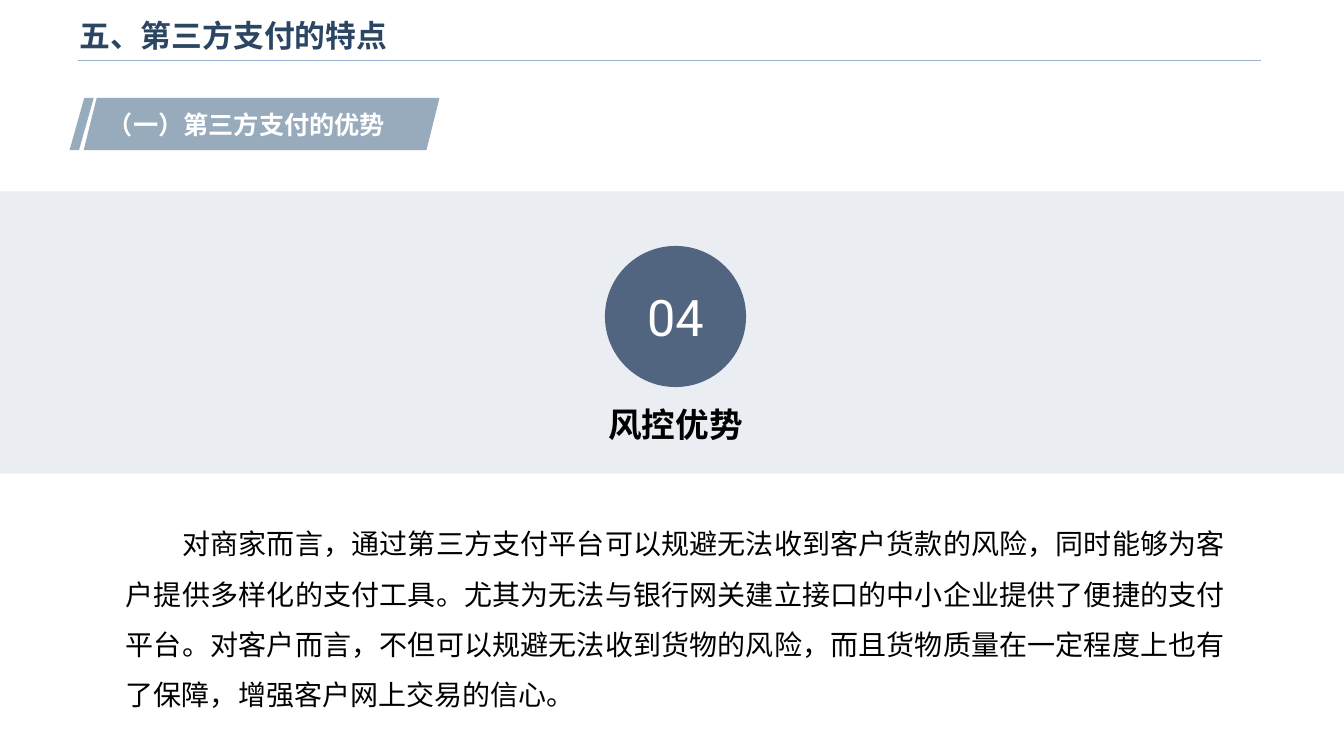
from pptx import Presentation
from pptx.dml.color import RGBColor
from pptx.enum.shapes import MSO_CONNECTOR as Line, MSO_SHAPE as Kind
from pptx.enum.text import MSO_ANCHOR as Anchor, PP_ALIGN as Align
from pptx.oxml.ns import qn
from pptx.util import Inches, Pt
from lxml import etree

SANS = "Noto Sans CJK SC"


def color(code):
    return RGBColor.from_string(code)


def write(shape, text, size, code, face=SANS, bold=False, anchor=Anchor.TOP, **form):
    frame = shape.text_frame
    frame.word_wrap = True
    frame.vertical_anchor = anchor
    par = frame.paragraphs[0]
    for name, value in form.items():
        setattr(par, name, value)
    run = par.add_run()
    run.text = text
    look = {"size": Pt(size), "name": face, "bold": bold}
    for name, value in look.items():
        setattr(run.font, name, value)
    run.font.color.rgb = color(code)
    # Chinese glyphs take their own typeface
    east = etree.SubElement(run.font._element, qn("a:ea"))
    east.set("typeface", SANS)
    return par


deck = Presentation()
deck.slide_width, deck.slide_height = Inches(13.33), Inches(7.5)
slide = deck.slides.add_slide(deck.slide_layouts[6])
shapes = slide.shapes

# Rule under the title
rule = shapes.add_connector(Line.STRAIGHT, Inches(0.77), Inches(0.6), Inches(12.51), Inches(0.6))
rule.line.color.rgb = color("98B4D2")
rule.line.width = Pt(1)
etree.SubElement(rule._element.spPr, qn("a:effectLst"))

# Filled shapes: section tag, band and number disc
plain = {}
for name, kind, box, fill, slant in [
    ("stripe", Kind.PARALLELOGRAM, (0.69, 0.97, 0.24, 0.52), "94ACBC", 0.61),
    ("tag", Kind.PARALLELOGRAM, (0.83, 0.97, 3.53, 0.52), "97ABBD", 0.25),
    ("band", Kind.RECTANGLE, (0, 1.9, 13.33, 2.8), "EAEEF2", None),
    ("disc", Kind.OVAL, (6, 2.44, 1.4, 1.4), "526580", None),
]:
    shape = shapes.add_shape(kind, *map(Inches, box))
    shape.shadow.inherit = False
    shape.fill.solid()
    shape.fill.fore_color.rgb = color(fill)
    shape.line.fill.background()
    if slant:
        shape.adjustments[0] = slant
    plain[name] = shape
write(plain["disc"], "04", 36, "FFFFFF", "Roboto", anchor=Anchor.MIDDLE, alignment=Align.CENTER)

# Tag text sits slightly left of the middle
write(plain["tag"], "（一）第三方支付的优势", 18, "FFFFFF", bold=True,
      anchor=Anchor.MIDDLE, alignment=Align.CENTER)
inset = {"word_wrap": False, "margin_left": 0, "margin_right": Inches(0.3)}
for name, value in inset.items():
    setattr(plain["tag"].text_frame, name, value)

# Title and heading
title = shapes.add_textbox(Inches(0.69), Inches(0.08), Inches(10.71), Inches(0.53))
write(title, "五、第三方支付的特点", 22, "2B4663", "Arial", True, Anchor.MIDDLE)

head = shapes.add_textbox(Inches(1.08), Inches(3.84), Inches(11.24), Inches(0.62))
write(head, "风控优势", 24, "000000", bold=True, alignment=Align.CENTER, line_spacing=1.3)

# Body text with an indented first line
body = shapes.add_textbox(Inches(1.15), Inches(5.01), Inches(11.1), Inches(2.12))
par = write(
    body,
    "对商家而言，通过第三方支付平台可以规避无法收到客户货款的风险，同时能够为客户提供多样化的支付工具。"
    "尤其为无法与银行网关建立接口的中小企业提供了便捷的支付平台。"
    "对客户而言，不但可以规避无法收到货物的风险，而且货物质量在一定程度上也有了保障，增强客户网上交易的信心。",
    20, "000000", alignment=Align.JUSTIFY, line_spacing=1.5,
)
par._p.get_or_add_pPr().set("indent", str(Inches(0.56)))

deck.save("out.pptx")
